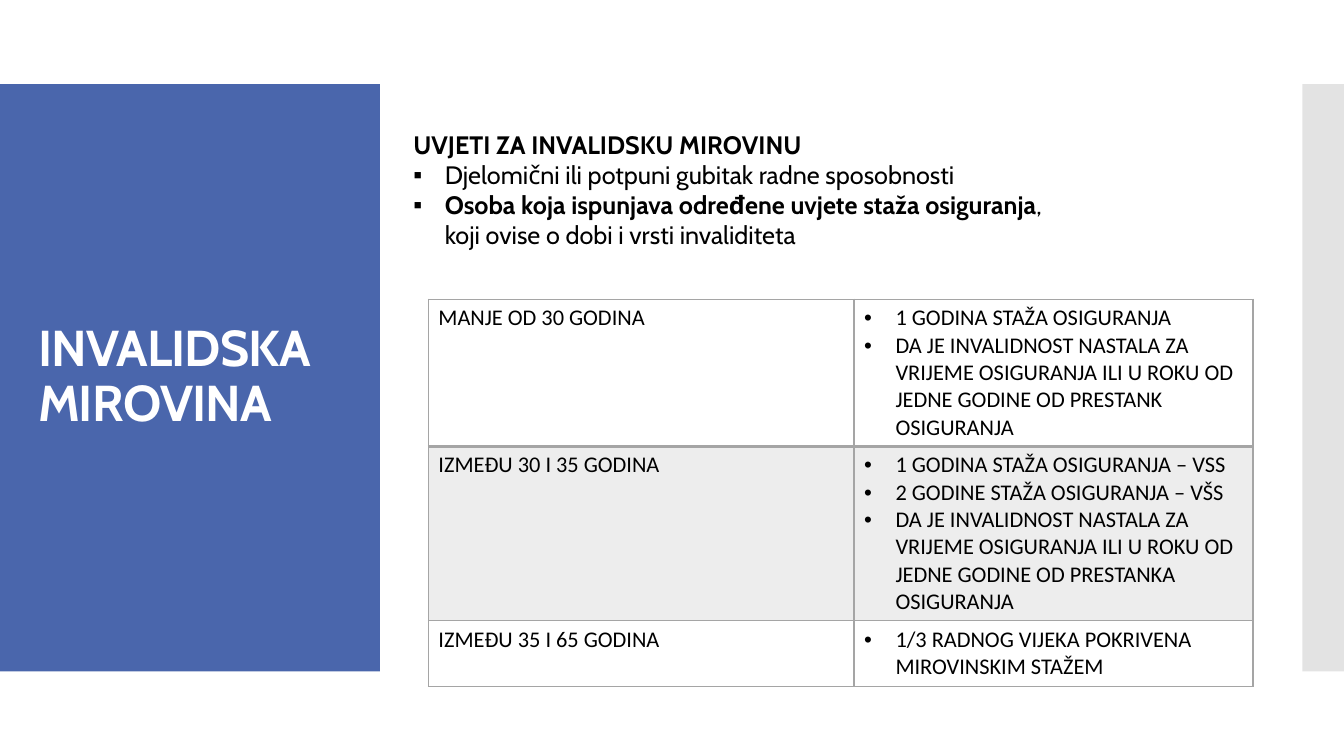
import pptx
import pptx.dml.color
import pptx.enum.shapes
import pptx.enum.text
import pptx.oxml
import pptx.oxml.ns
import pptx.util
from dataclasses import dataclass

Pt = pptx.util.Pt
qn = pptx.oxml.ns.qn
RGBColor = pptx.dml.color.RGBColor


@dataclass(frozen=True)
class Theme:
    heading_font: str = "Cabin"
    table_font: str = "Calibri"
    title_size: int = 36
    body_size: int = 18
    table_size: int = 16
    accent: str = "4A66AC"
    side_bar: str = "C8C8C8"
    grid: str = "A5A5A5"
    text: str = "000000"
    inverse: str = "FFFFFF"


theme = Theme()
INDENT = Pt(22.5)


def write_paragraph(paragraph, runs, font, size, color, bullet=None):
    """Write (text, bold) runs, with a hanging bullet if one is given."""
    paragraph.alignment = pptx.enum.text.PP_ALIGN.LEFT
    paragraph.space_before = Pt(0)
    properties = paragraph._p.get_or_add_pPr()
    properties.set("marL", str(INDENT if bullet else 0))
    properties.set("indent", str(-INDENT if bullet else 0))
    if bullet:
        bullet_font = properties.makeelement(qn("a:buFont"), {"typeface": "Arial"})
        bullet_mark = properties.makeelement(qn("a:buChar"), {"char": bullet})
        properties.extend([bullet_font, bullet_mark])
    else:
        properties.append(properties.makeelement(qn("a:buNone"), {}))
    for text, bold in runs:
        run = paragraph.add_run()
        run.text = text
        run.font.name = font
        run.font.size = Pt(size)
        run.font.bold = bold
        run.font.color.rgb = RGBColor.from_string(color)


def fill_solid(fill, properties, color, opacity):
    fill.solid()
    fill.fore_color.rgb = RGBColor.from_string(color)
    color_element = properties.find(qn("a:solidFill")).find(qn("a:srgbClr"))
    if opacity < 100:
        alpha = color_element.makeelement(qn("a:alpha"), {"val": str(opacity * 1000)})
        color_element.append(alpha)


presentation = pptx.Presentation()
presentation.slide_width = Pt(960)
presentation.slide_height = Pt(540)
slide = presentation.slides.add_slide(presentation.slide_layouts[1])
title = slide.shapes.title
conditions = slide.placeholders[1]

# Side panels, behind the text
panels = [(0, 271.4, theme.accent, 100), (930.2, 29.8, theme.side_bar, 50)]
for position, (left, width, color, opacity) in enumerate(panels):
    panel = slide.shapes.add_shape(
        pptx.enum.shapes.MSO_SHAPE.RECTANGLE, Pt(left), Pt(60), Pt(width), Pt(419.5))
    panel.shadow.inherit = False
    fill_solid(panel.fill, panel.element.spPr, color, opacity)
    panel.line.fill.background()
    title.element.getparent().insert(2 + position, panel.element)

# Title
title.left, title.top, title.width, title.height = Pt(20), Pt(88.5), Pt(232), Pt(362.5)
title.text_frame.word_wrap = True
title.text_frame.auto_size = pptx.enum.text.MSO_AUTO_SIZE.NONE
title.text_frame.vertical_anchor = pptx.enum.text.MSO_ANCHOR.MIDDLE
heading = title.text_frame.paragraphs[0]
heading.line_spacing = 0.9
write_paragraph(heading, [("INVALIDSKA MIROVINA", True)],
                theme.heading_font, theme.title_size, theme.inverse)
heading.runs[0].font._element.set("spc", "-60")

# Conditions
conditions.left, conditions.top = Pt(288), Pt(88.5)
conditions.width, conditions.height = Pt(480), Pt(116.5)
conditions.text_frame.word_wrap = True
conditions.text_frame.auto_size = pptx.enum.text.MSO_AUTO_SIZE.NONE
conditions.text_frame.vertical_anchor = pptx.enum.text.MSO_ANCHOR.TOP
condition_lines = [
    (None, [("UVJETI ZA INVALIDSKU MIROVINU", True)]),
    ("▪", [("Djelomični ili potpuni gubitak radne sposobnosti", False)]),
    ("▪", [("Osoba koja ispunjava određene uvjete staža osiguranja", True),
           (", koji ovise o dobi i vrsti invaliditeta", False)]),
]
for index, (bullet, runs) in enumerate(condition_lines):
    frame = conditions.text_frame
    paragraph = frame.add_paragraph() if index else frame.paragraphs[0]
    write_paragraph(paragraph, runs, theme.heading_font, theme.body_size, theme.text, bullet)

# Table: height, top and bottom border, shading, age group, requirements
age_groups = [
    (103, 1, 2, False, "MANJE OD 30 GODINA", [
        "1 GODINA STAŽA OSIGURANJA",
        "DA JE INVALIDNOST NASTALA ZA VRIJEME OSIGURANJA ILI U ROKU OD "
        "JEDNE GODINE OD PRESTANK OSIGURANJA"]),
    (122.5, 2, 1, True, "IZMEĐU 30 I 35 GODINA", [
        "1 GODINA STAŽA OSIGURANJA – VSS",
        "2 GODINE STAŽA OSIGURANJA – VŠS",
        "DA JE INVALIDNOST NASTALA ZA VRIJEME OSIGURANJA ILI U ROKU OD "
        "JEDNE GODINE OD PRESTANKA OSIGURANJA"]),
    (47, 1, 1, False, "IZMEĐU 35 I 65 GODINA", [
        "1/3 RADNOG VIJEKA POKRIVENA MIROVINSKIM STAŽEM"]),
]
table = slide.shapes.add_table(
    len(age_groups), 2, Pt(306), Pt(213.8), Pt(589), Pt(272.5)).table
table.first_row = False
table.horz_banding = False
table.columns[0].width = Pt(304)
table.columns[1].width = Pt(285)
for row, (height, top, bottom, shaded, age, requirements) in enumerate(age_groups):
    table.rows[row].height = Pt(height)
    for column, (bullet, lines) in enumerate([(None, [age]), ("•", requirements)]):
        cell = table.cell(row, column)
        cell_properties = cell._tc.get_or_add_tcPr()
        for side, width in [("L", 1), ("R", 1), ("T", top), ("B", bottom)]:
            cell_properties.append(pptx.oxml.parse_xml(
                f'<a:ln{side} {pptx.oxml.ns.nsdecls("a")} w="{Pt(width)}">'
                f'<a:solidFill><a:srgbClr val="{theme.grid}"/></a:solidFill></a:ln{side}>'))
        if shaded:
            fill_solid(cell.fill, cell_properties, theme.grid, 20)
        else:
            cell.fill.background()
        for index, line in enumerate(lines):
            frame = cell.text_frame
            paragraph = frame.add_paragraph() if index else frame.paragraphs[0]
            write_paragraph(paragraph, [(line, False)], theme.table_font,
                            theme.table_size, theme.text, bullet)

presentation.save("out.pptx")
